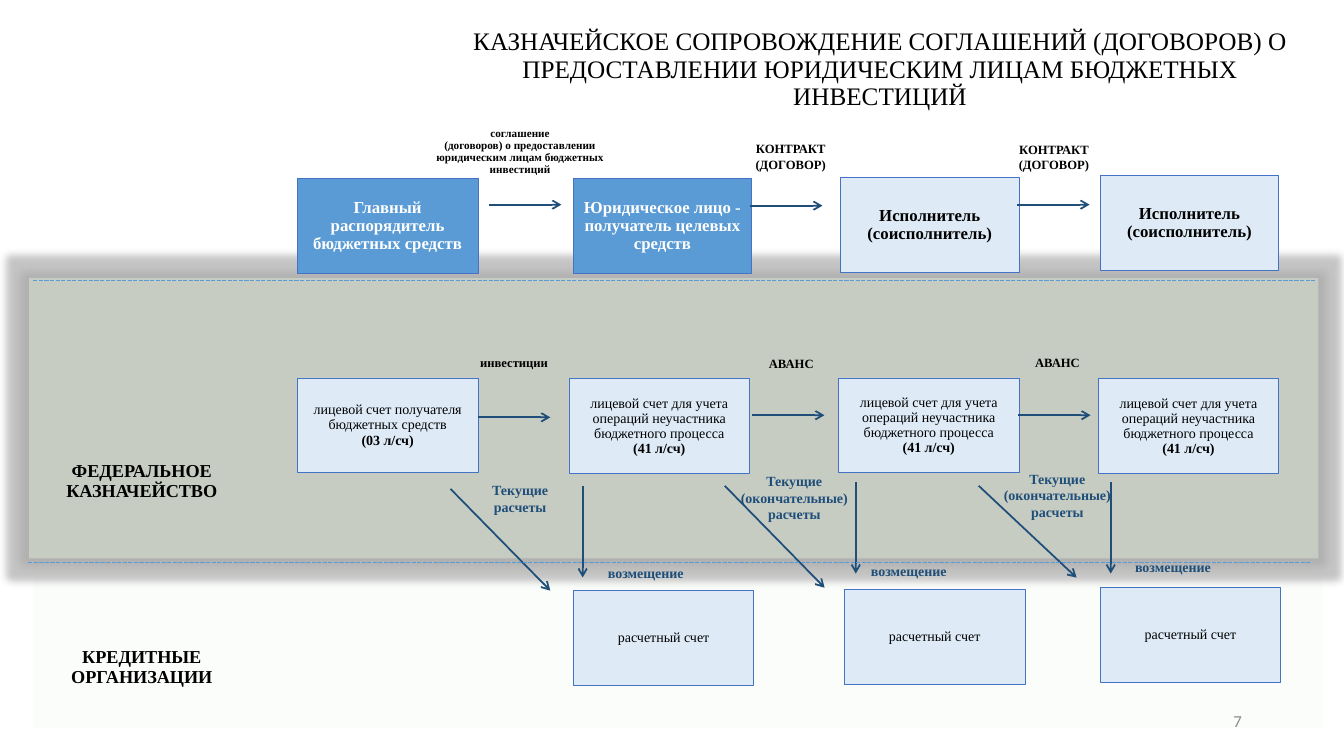
from dataclasses import dataclass

import lxml.etree
import pptx
import pptx.dml.color
import pptx.enum.dml
import pptx.enum.shapes
import pptx.enum.text
import pptx.oxml.ns
import pptx.util

Pt = pptx.util.Pt
qn = pptx.oxml.ns.qn
ALIGN = pptx.enum.text.PP_ALIGN
ANCHOR = pptx.enum.text.MSO_ANCHOR
SHAPES = pptx.enum.shapes

COLORS = {
    "black": "000000", "white": "FFFFFF", "page": "8C8C8C", "blue": "5B9BD5",
    "pale": "DEEBF7", "border": "4472C4", "navy": "1F4E79", "green": "E2F0D9",
    "glow": "A5A5A5",
}


@dataclass
class Style:
    size: float
    color: str = "black"
    bold: bool = False
    spacing: float = 1.0
    font: str = "Times New Roman"
    align: ALIGN = ALIGN.CENTER
    anchor: ANCHOR = ANCHOR.MIDDLE
    inset: tuple[float, float] = (7.2, 3.6)


@dataclass
class Box:
    x: float
    y: float
    w: float
    text: str
    style: Style
    fill: str = "pale"
    h: float = 67.8


@dataclass
class Label:
    x: float
    y: float
    w: float
    h: float
    text: str
    style: Style


@dataclass
class Line:
    x1: float
    y1: float
    x2: float
    y2: float
    color: str = "navy"
    width: float = 1.25
    dashed: bool = False


TIGHT = (0.7, 0.7)
TITLE = Style(18, spacing=0.9, anchor=ANCHOR.TOP)
PAGE = Style(12, "page", font="Calibri", align=ALIGN.RIGHT)
SECTION = Style(13, bold=True, spacing=0.9, inset=TIGHT)
PAYER = Style(12, "white", True, 0.9, inset=TIGHT)
EXECUTOR = Style(12, bold=True, spacing=0.9, inset=TIGHT)
ACCOUNT = Style(10, spacing=0.9, inset=TIGHT)
AGREEMENT = Style(8, bold=True, spacing=0.9)
CAPTION = Style(9, bold=True)
PAYMENT = Style(10, "navy", True)

EXECUTOR_TEXT = "Исполнитель (соисполнитель)"
ACCOUNT_TEXT = "лицевой счет для учета операций неучастника бюджетного процесса\n**(41 л/сч)"
FINAL_TEXT = "Текущие (окончательные)\nрасчеты"


def rgb(name: str) -> pptx.dml.color.RGBColor:
    return pptx.dml.color.RGBColor.from_string(COLORS[name])


def write(s, text: str, style: Style) -> None:
    """Fill a shape with text; a paragraph marked ** is bold."""
    tf = s.text_frame
    dx, dy = (Pt(v) for v in style.inset)
    frame = {"word_wrap": True, "vertical_anchor": style.anchor, "margin_left": dx,
             "margin_right": dx, "margin_top": dy, "margin_bottom": dy}
    for name, value in frame.items():
        setattr(tf, name, value)
    for i, line in enumerate(text.split("\n")):
        p = tf.add_paragraph() if i else tf.paragraphs[0]
        p.alignment, p.line_spacing = style.align, style.spacing
        r = p.add_run()
        r.text = line.removeprefix("**")
        font = {"name": style.font, "size": Pt(style.size),
                "bold": style.bold or line.startswith("**")}
        for name, value in font.items():
            setattr(r.font, name, value)
        r.font.color.rgb = rgb(style.color)


def add_rect(slide, x: float, y: float, w: float, h: float, fill: str):
    s = slide.shapes.add_shape(SHAPES.MSO_SHAPE.RECTANGLE, Pt(x), Pt(y), Pt(w), Pt(h))
    s.shadow.inherit = False
    s.fill.solid()
    s.fill.fore_color.rgb = rgb(fill)
    return s


def add_band(slide, x: float, y: float, w: float, h: float, opacity: int, glow: float = 0) -> None:
    s = add_rect(slide, x, y, w, h, "green")
    s.line.fill.background()
    props = s._element.spPr
    color = props.find(qn("a:solidFill")).find(qn("a:srgbClr"))
    lxml.etree.SubElement(color, qn("a:alpha"), val=str(opacity * 1000))
    if glow:
        effect = lxml.etree.SubElement(props.find(qn("a:effectLst")), qn("a:glow"), rad=str(Pt(glow)))
        color = lxml.etree.SubElement(effect, qn("a:srgbClr"), val=COLORS["glow"])
        lxml.etree.SubElement(color, qn("a:alpha"), val="64000")


def add_box(slide, b: Box) -> None:
    s = add_rect(slide, b.x, b.y, b.w, b.h, b.fill)
    s.line.color.rgb = rgb("border")
    s.line.width = Pt(0.5)
    write(s, b.text, b.style)


def add_label(slide, t: Label) -> None:
    s = slide.shapes.add_textbox(Pt(t.x), Pt(t.y), Pt(t.w), Pt(t.h))
    write(s, t.text, t.style)


def add_line(slide, n: Line) -> None:
    s = slide.shapes.add_connector(
        SHAPES.MSO_CONNECTOR.STRAIGHT, Pt(n.x1), Pt(n.y1), Pt(n.x2), Pt(n.y2))
    s.line.color.rgb = rgb(n.color)
    s.line.width = Pt(n.width)
    props = s._element.spPr
    if n.dashed:
        s.line.dash_style = pptx.enum.dml.MSO_LINE.SQUARE_DOT
    else:
        lxml.etree.SubElement(props.find(qn("a:ln")), qn("a:tailEnd"), type="arrow")
    lxml.etree.SubElement(props, qn("a:effectLst"))


BOXES = [
    # Parties to the agreements
    Box(212.4, 127.5, 129, "Главный распорядитель бюджетных средств", PAYER, "blue"),
    Box(409.5, 127.5, 127.5, "Юридическое лицо - получатель целевых средств", PAYER, "blue"),
    Box(600.3, 126.7, 127.7, EXECUTOR_TEXT, EXECUTOR),
    Box(785.8, 125.3, 127.7, EXECUTOR_TEXT, EXECUTOR),
    # Treasury accounts
    Box(212.4, 270, 129, "лицевой счет получателя бюджетных средств\n**(03 л/сч)", ACCOUNT),
    *(Box(x, y, 129, ACCOUNT_TEXT, ACCOUNT)
      for x, y in ((406.4, 270.6), (598.9, 270), (784.4, 270.6))),
    # Bank accounts
    *(Box(x, y, 129, "расчетный счет", ACCOUNT)
      for x, y in ((409.5, 421.7), (603.1, 420.8), (785.8, 419.6))),
]

LABELS = [
    Label(678.2, 500.4, 216, 28.8, "7", PAGE),
    Label(326.2, 17.3, 604.8, 66.2, "КАЗНАЧЕЙСКОЕ СОПРОВОЖДЕНИЕ СОГЛАШЕНИЙ (ДОГОВОРОВ) О "
          "ПРЕДОСТАВЛЕНИИ ЮРИДИЧЕСКИМ ЛИЦАМ БЮДЖЕТНЫХ ИНВЕСТИЦИЙ", TITLE),
    Label(23.8, 305.3, 154.8, 77, "ФЕДЕРАЛЬНОЕ КАЗНАЧЕЙСТВО", SECTION),
    Label(23.8, 438.5, 154.8, 77, "КРЕДИТНЫЕ ОРГАНИЗАЦИИ", SECTION),
    Label(299.5, 85, 144, 47.5, "соглашение\n(договоров) о предоставлении "
          "юридическим лицам бюджетных инвестиций", AGREEMENT),
    *(Label(x, y, 75.6, 40.3, "КОНТРАКТ (ДОГОВОР)", CAPTION) for x, y in ((527, 91.6), (715, 92.2))),
    *(Label(x, y, 95, 30, text, CAPTION) for x, y, text in (
        (319.7, 243.6, "инвестиции"), (517.7, 245, "АВАНС"), (707.8, 243.6, "АВАНС"))),
    *(Label(x, y, 75.6, 15.1, "возмещение", PAYMENT)
      for x, y in ((423.4, 401.8), (611.3, 400.5), (800, 397.4))),
    *(Label(x, y, 96.5, 20.9, text, PAYMENT) for x, y, text in (
        (323.3, 345.6, "Текущие\nрасчеты"), (519.1, 344.9, FINAL_TEXT), (707, 343.4, FINAL_TEXT))),
]

LINES = [
    # Horizontal arrows between the boxes of a row
    *(Line(x, y, x + 51.8, y) for x, y in (
        (349.2, 146.2), (535.7, 146.9), (726.5, 146.2), (341.3, 298.1), (537.1, 296.6), (727.2, 296.6))),
    # Settlement arrows
    Line(321.8, 349.2, 393.1, 421.9),
    Line(517.7, 347, 589, 419.8),
    Line(699.1, 347, 769, 412.6),
    # Reimbursement arrows
    *(Line(x, y, x, y + 65.5) for x, y in ((416.2, 347), (611.3, 344.2), (793.4, 344.2))),
    # Section borders
    *(Line(x, y, x + 915.5, y, "blue", 1, True) for x, y in ((23.8, 200.2), (20.2, 401.8))),
]


def main() -> None:
    prs = pptx.Presentation()
    prs.slide_width, prs.slide_height = Pt(960), Pt(540)
    slide = prs.slides.add_slide(prs.slide_layouts[6])
    # Background bands
    add_band(slide, 23.8, 406.1, 920.9, 113.8, 12)
    add_band(slide, 20.9, 198.7, 920.9, 200.2, 45, glow=11)
    # Boxes, arrows and captions
    for b in BOXES:
        add_box(slide, b)
    for n in LINES:
        add_line(slide, n)
    for t in LABELS:
        add_label(slide, t)
    prs.save("out.pptx")


if __name__ == "__main__":
    main()
